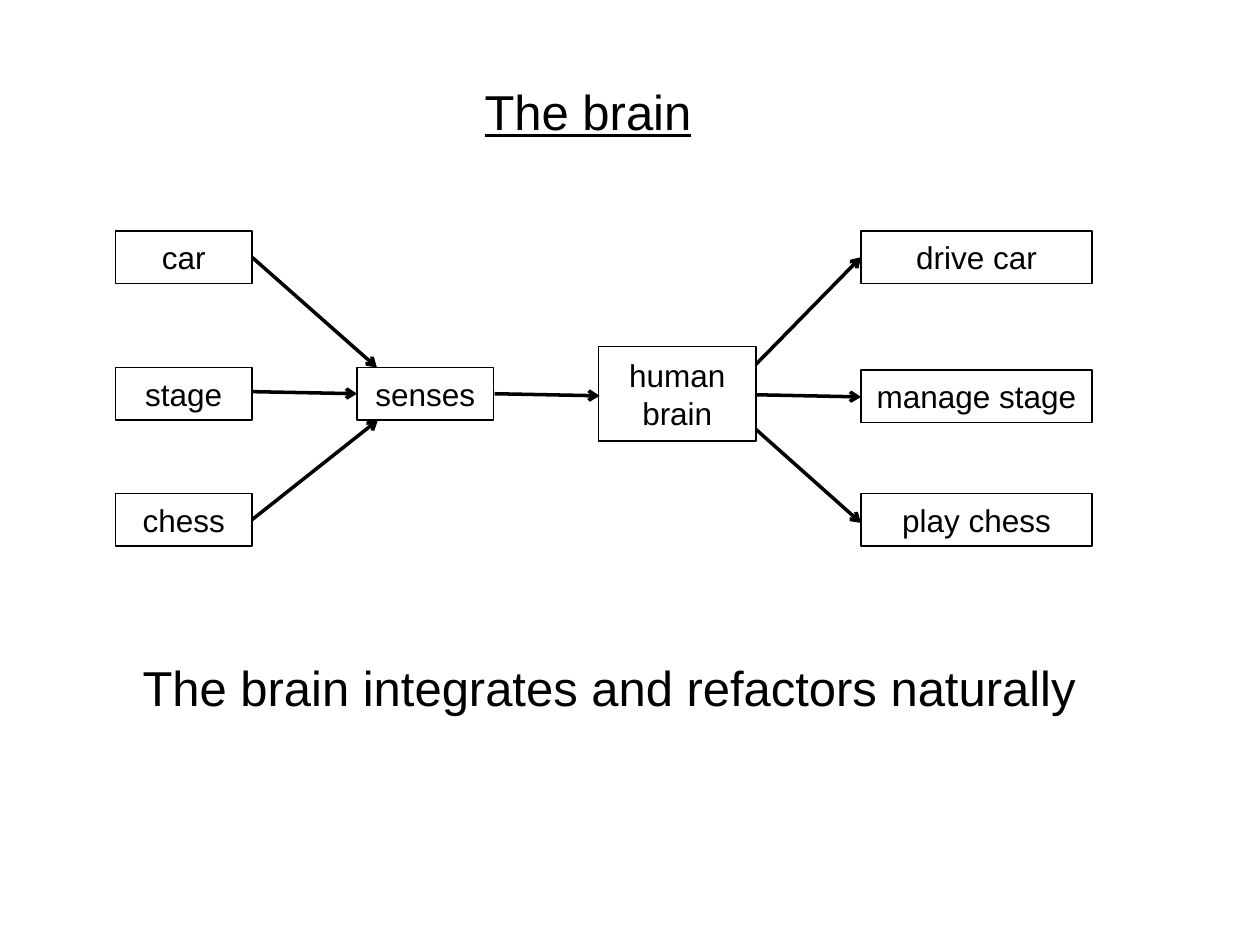
import pptx
import pptx.util
import pptx.dml.color
import pptx.enum.shapes
import pptx.enum.text
import pptx.oxml
import pptx.oxml.ns

COLS, ROWS = 120, 90
INK = "000000"


def paint(code):
    return pptx.dml.color.RGBColor.from_string(code)


def assign(item, values):
    for name, value in values.items():
        setattr(item, name, value)


class Sketch:
    """Style and current slide; lengths are columns and rows of the grid."""

    small = {"name": "Arial", "size": pptx.util.Pt(18)}
    large = {"name": "Arial", "size": pptx.util.Pt(28)}
    frame = {"word_wrap": True,
             "auto_size": pptx.enum.text.MSO_AUTO_SIZE.NONE,
             "vertical_anchor": pptx.enum.text.MSO_ANCHOR.MIDDLE}

    def __init__(self, deck):
        self.cell = deck.slide_width / COLS, deck.slide_height / ROWS
        self.slide = deck.slides.add_slide(deck.slide_layouts[5])
        self.shapes = self.slide.shapes
        back = self.slide.background.fill
        back.solid()
        back.fore_color.rgb = paint("FFFFFF")

    def scale(self, *spots):
        """Turn alternating columns and rows into lengths."""
        return [round(n * self.cell[i % 2]) for i, n in enumerate(spots)]

    def letter(self, shape, text, font):
        """Fill a shape with centred text."""
        frame = shape.text_frame
        assign(frame, self.frame)
        frame.text = text
        for para in frame.paragraphs:
            para.alignment = pptx.enum.text.PP_ALIGN.CENTER
            for run in para.runs:
                assign(run.font, font)
                run.font.color.rgb = paint(INK)

    def stroke(self, line, width):
        line.color.rgb = paint(INK)
        line.width = pptx.util.Pt(width)

    def title(self, text, *spots):
        shape = self.shapes.title
        assign(shape, dict(zip(("left", "top", "width", "height"),
                               self.scale(*spots))))
        self.letter(shape, text, {**self.large, "underline": True})

    def label(self, text, *spots):
        self.letter(self.shapes.add_textbox(*self.scale(*spots)),
                    text, self.large)

    def box(self, text, *spots):
        kind = pptx.enum.shapes.MSO_SHAPE.RECTANGLE
        shape = self.shapes.add_shape(kind, *self.scale(*spots))
        shape.shadow.inherit = False
        shape.fill.background()
        self.stroke(shape.line, 1)
        self.letter(shape, text, self.small)

    def arrow(self, *ends):
        kind = pptx.enum.shapes.MSO_CONNECTOR.STRAIGHT
        link = self.shapes.add_connector(kind, *self.scale(*ends))
        self.stroke(link.line, 2)
        name = pptx.oxml.ns.qn
        props = link.element.spPr
        line = props.find(name("a:ln"))
        line.append(line.makeelement(name("a:tailEnd"), {"type": "arrow"}))
        props.append(props.makeelement(name("a:effectLst"), {}))


def main():
    deck = pptx.Presentation()
    deck.slide_width = pptx.util.Inches(10)
    deck.slide_height = pptx.util.Inches(7.5)
    art = Sketch(deck)
    art.title("The brain", 44, 7.1, 24, 6.85)

    high = 5
    for text, row in ("car", 22), ("stage", 35), ("chess", 47):
        art.box(text, 11, row, 13, high)
    art.box("senses", 34, 35, 13, high)
    art.box("human\nbrain", 57, 33, 15, 9)
    for text, row in (("drive car", 22), ("manage stage", 35.25),
                      ("play chess", 47)):
        art.box(text, 82, row, 22, high)

    for ends in ((24, 24.5, 35.9, 35), (24, 37.3, 34, 37.5),
                 (24, 49.5, 36, 40), (47.1, 37.5, 57.1, 37.7),
                 (72, 34.7, 82, 24.5), (72, 37.6, 82, 37.8),
                 (72, 40.9, 82, 49.8)):
        art.arrow(*ends)

    art.label("The brain integrates and refactors naturally",
              10, 62, 96, 6.85)
    deck.save("out.pptx")


if __name__ == "__main__":
    main()
